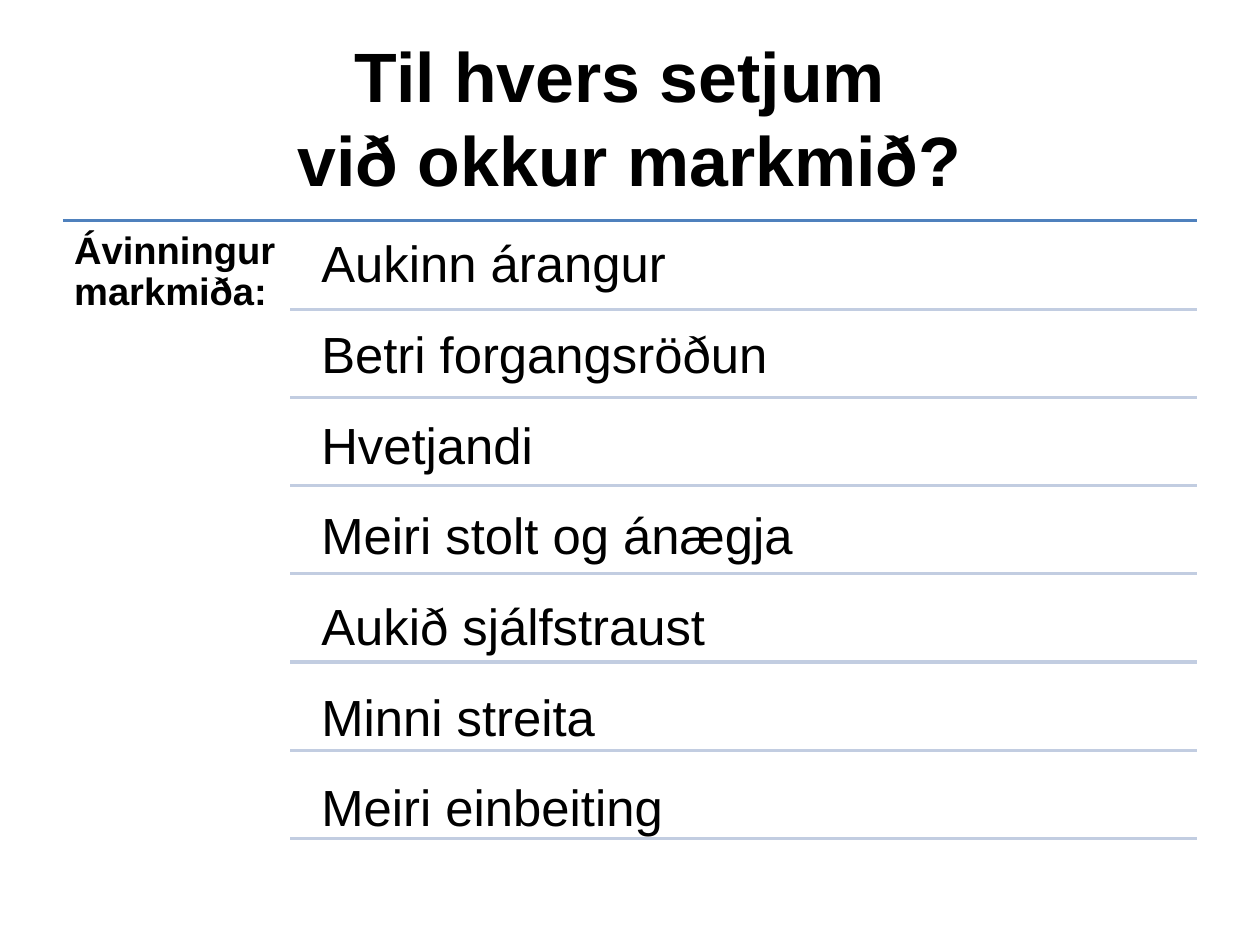
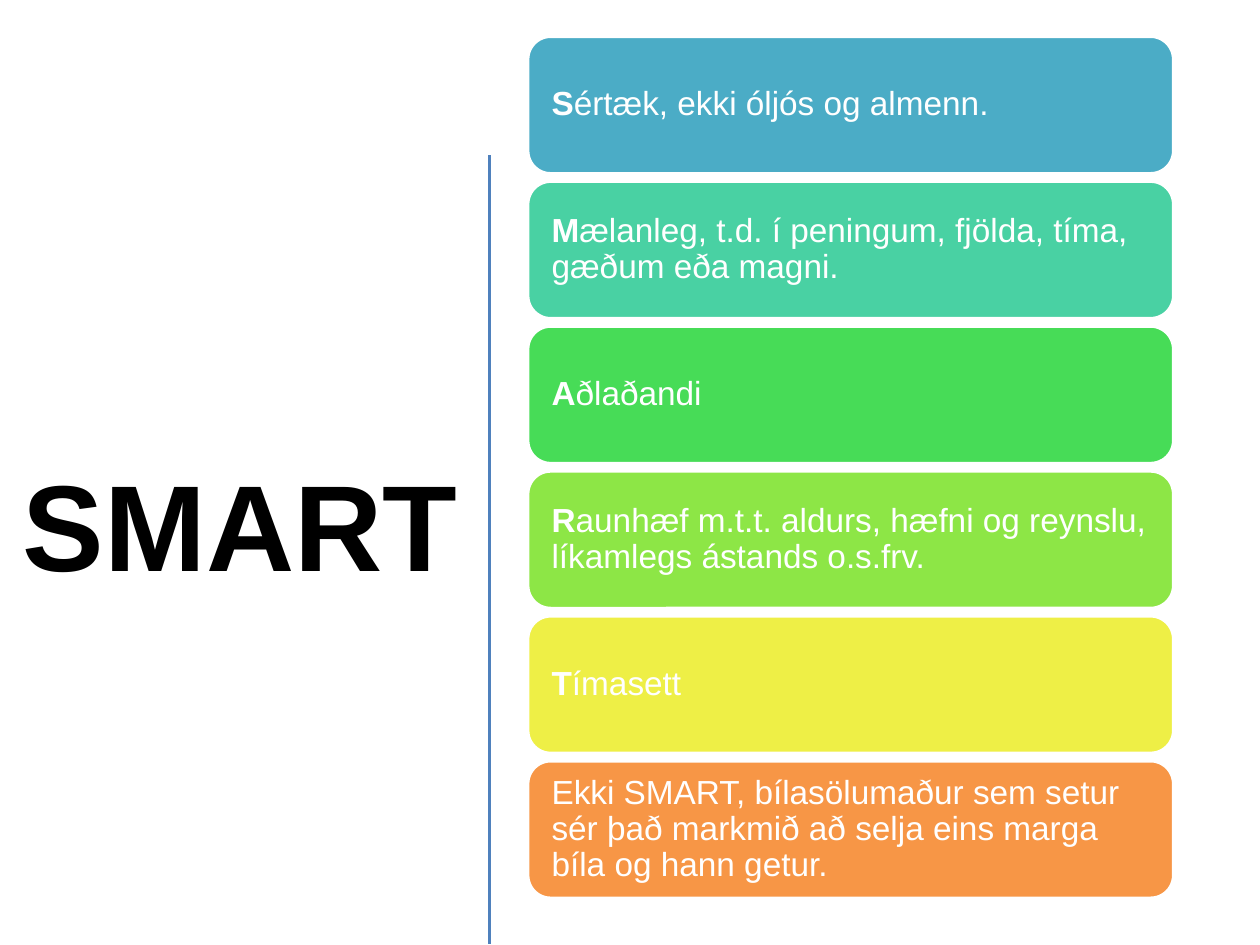
from lxml.etree import SubElement
from pptx import Presentation
from pptx.dml.color import RGBColor
from pptx.enum.shapes import MSO_CONNECTOR, MSO_SHAPE
from pptx.enum.text import MSO_ANCHOR, MSO_AUTO_SIZE, PP_ALIGN
from pptx.oxml.ns import qn
from pptx.util import Cm, Pt

FONT = "Arial"
BLACK, WHITE = "000000", "FFFFFF"
BLUE, PALE_BLUE = "4F81BD", "C2CDE1"


def format_text(frame, size, color=BLACK, bold=False, align=PP_ALIGN.LEFT,
                anchor=MSO_ANCHOR.TOP, inset=0.25, line_spacing=0.9, space_after=0):
    frame.word_wrap = True
    frame.auto_size = MSO_AUTO_SIZE.NONE
    frame.vertical_anchor = anchor
    frame.margin_left = frame.margin_right = Cm(inset)
    frame.margin_top = frame.margin_bottom = Cm(inset)
    for para in frame.paragraphs:
        para.alignment = align
        para.line_spacing = line_spacing
        para.space_before = Pt(0)
        para.space_after = Pt(space_after)
        for span in para.runs:
            span.font.name = FONT
            span.font.size = Pt(size)
            span.font.bold = bold
            span.font.color.rgb = RGBColor.from_string(color)


def add_rule(page, left, top, right, bottom, color):
    rule = page.shapes.add_connector(
        MSO_CONNECTOR.STRAIGHT, Cm(left), Cm(top), Cm(right), Cm(bottom))
    rule.line.color.rgb = RGBColor.from_string(color)
    rule.line.width = Pt(2)
    SubElement(rule._element.spPr, qn("a:effectLst"))


deck = Presentation()
deck.slide_width, deck.slide_height = Cm(28), Cm(21)
content_layout, title_layout = deck.slide_layouts[1], deck.slide_layouts[5]

page = deck.slides.add_slide(content_layout)
title = page.shapes.title
title.left, title.top, title.width, title.height = Cm(1.4), Cm(0.97), Cm(25.2), Cm(3.25)
title.text_frame.text = "Til hvers setjum \nvið okkur markmið?"
format_text(title.text_frame, 44, bold=True, align=PP_ALIGN.CENTER,
            anchor=MSO_ANCHOR.MIDDLE, inset=0, line_spacing=1.0)

label = page.shapes.add_textbox(Cm(1.4), Cm(4.9), Cm(5.04), Cm(13.86))
label.text_frame.text = "Ávinningur markmiða:"
format_text(label.text_frame, 24, bold=True)

benefits = [
    "Aukinn árangur",
    "Betri forgangsröðun",
    "Hvetjandi",
    "Meiri stolt og ánægja",
    "Aukið sjálfstraust",
    "Minni streita",
    "Meiri einbeiting",
]
row_height = 1.96
body = page.placeholders[1]
body.left, body.top, body.width = Cm(6.81), Cm(4.98), Cm(19.79)
body.height = Cm(row_height * len(benefits))
body.text_frame.text = "\n".join(benefits)
format_text(body.text_frame, 32, inset=0.33, space_after=22.5)
for para in body.text_frame.paragraphs:
    properties = para._p.get_or_add_pPr()
    properties.set("marL", "0")
    properties.set("indent", "0")
    SubElement(properties, qn("a:buNone"))

add_rule(page, 1.4, 4.9, 26.6, 4.9, BLUE)
for row in range(len(benefits)):
    rule_top = 6.87 + row * row_height
    add_rule(page, 6.45, rule_top, 26.6, rule_top, PALE_BLUE)

page = deck.slides.add_slide(title_layout)
title = page.shapes.title
title.left, title.top, title.width, title.height = Cm(0.23), Cm(3.28), Cm(10.19), Cm(17.09)
title.text_frame.text = "SMART "
format_text(title.text_frame, 77, bold=True, align=PP_ALIGN.RIGHT,
            anchor=MSO_ANCHOR.MIDDLE, space_after=6)
add_rule(page, 10.87, 3.45, 10.87, 20.98, BLUE)

criteria = [
    ("S", "értæk, ekki óljós og almenn.", "4BACC6"),
    ("M", "ælanleg, t.d. í peningum, fjölda, tíma, gæðum eða magni.", "49D1A3"),
    ("A", "ðlaðandi", "47DC57"),
    ("R", "aunhæf m.t.t. aldurs, hæfni og reynslu, líkamlegs ástands o.s.frv.", "8DE646"),
    ("T", "ímasett", "EEEF46"),
    ("", "Ekki SMART, bílasölumaður sem setur sér það markmið "
         "að selja eins marga bíla og hann getur.", "F79646"),
]
for row, (initial, rest, color) in enumerate(criteria):
    box = page.shapes.add_shape(MSO_SHAPE.ROUNDED_RECTANGLE, Cm(11.73),
                                Cm(0.81 + row * 3.22), Cm(14.35), Cm(3.05))
    box.shadow.inherit = False
    box.fill.solid()
    box.fill.fore_color.rgb = RGBColor.from_string(color)
    box.line.color.rgb = RGBColor.from_string(WHITE)
    box.line.width = Pt(2)
    para = box.text_frame.paragraphs[0]
    for text in filter(None, (initial, rest)):
        para.add_run().text = text
    format_text(box.text_frame, 21, WHITE, anchor=MSO_ANCHOR.MIDDLE, inset=0.38)
    para.runs[0].font.bold = bool(initial)

deck.save("out.pptx")
